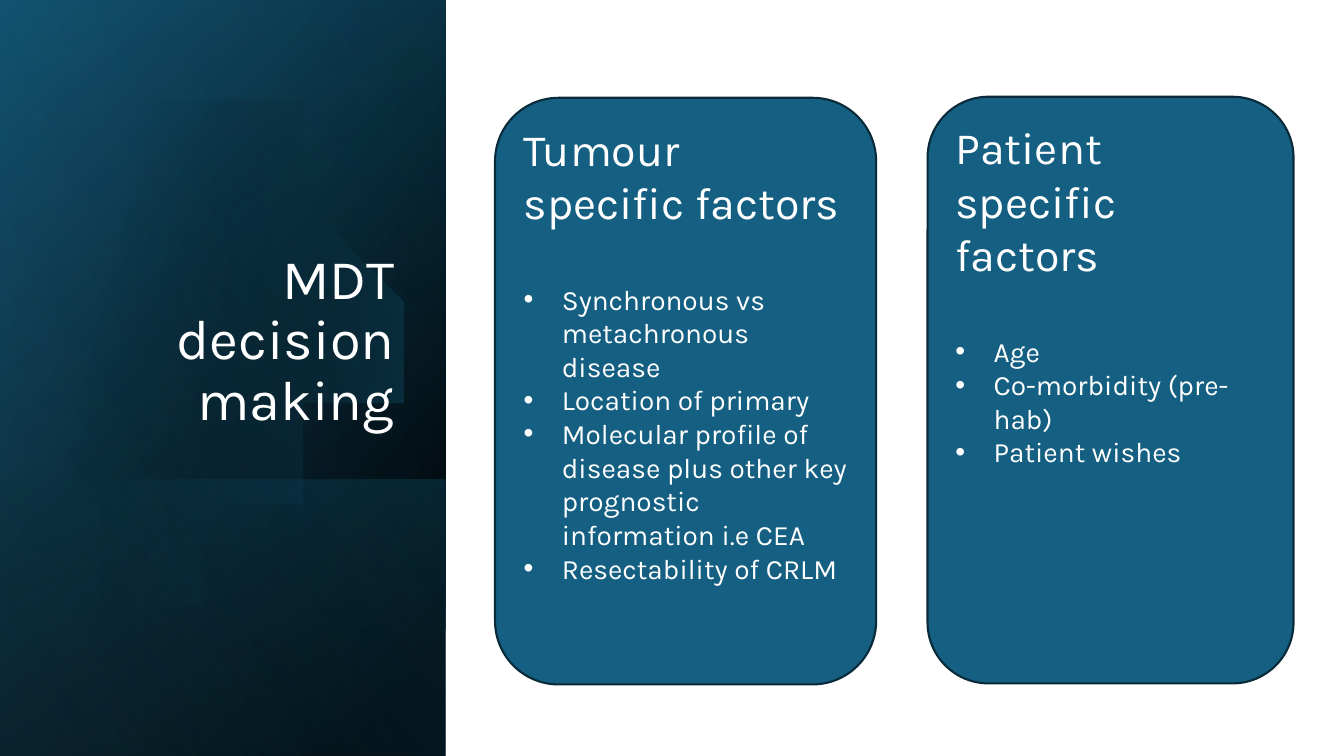
"""Build the slide on MDT decision making with two cards of factors."""
from dataclasses import dataclass

from lxml import etree
from pptx import Presentation
from pptx.dml.color import RGBColor
from pptx.enum.shapes import MSO_SHAPE
from pptx.enum.text import MSO_ANCHOR, PP_ALIGN
from pptx.oxml.ns import qn
from pptx.util import Inches, Pt

RECTANGLE = MSO_SHAPE.RECTANGLE
ROUNDED = MSO_SHAPE.ROUNDED_RECTANGLE
TOP, BOTTOM = MSO_ANCHOR.TOP, MSO_ANCHOR.BOTTOM
LEFT, RIGHT = PP_ALIGN.LEFT, PP_ALIGN.RIGHT

FONT = "Karla"
WHITE, BLACK, BLUE, NAVY = "FFFFFF", "000000", "156082", "092A39"
PANEL_WIDTH, PANEL_HEIGHT = 4.42, 7.5
BULLET_INDENT = 0.38
CURVE_STEPS = 24

Point = tuple[float, float]


@dataclass
class Stop:
    position: int
    color: str
    opacity: int = 100


@dataclass
class Layer:
    top: float
    height: float
    angle: int
    stops: list[Stop]


@dataclass
class Card:
    left: float
    top: float
    width: float
    heading: str
    factors: list[str]


BACK_LAYERS = [
    Layer(0, PANEL_HEIGHT, 50, [Stop(8, BLACK), Stop(100, "104862")]),
    Layer(0, PANEL_HEIGHT, 30, [Stop(0, BLACK, 0), Stop(99, BLUE, 46)]),
    Layer(4.76, 2.74, 130, [Stop(2, BLUE, 29), Stop(100, BLACK, 30)]),
]
FRONT_LAYER = Layer(0, PANEL_HEIGHT, 120, [Stop(0, BLACK, 0), Stop(99, "46B1E1", 11)])

DISC_STOPS = [Stop(29, BLACK, 0), Stop(100, BLUE, 43)]
DISC_ANGLE = 14
DISC_START = (1.49, 1.1)
DISC_RIGHT_CURVES = [
    ((2.46, 1.12), (3.35, 1.77), (3.63, 2.75)),
    ((3.98, 3.97), (3.28, 5.23), (2.07, 5.58)),
    ((1.31, 5.8), (0.53, 5.61), (-0.03, 5.14)),
]
DISC_LEFT_EDGE = [(-0.15, 5.03), (-0.15, 1.75), (0, 1.61)]
DISC_TOP_CURVES = [
    ((0.23, 1.42), (0.5, 1.28), (0.8, 1.19)),
    ((1.03, 1.13), (1.26, 1.1), DISC_START),
]

CARD_HEIGHT = 5.82
CARDS = [
    Card(4.91, 0.97, 3.78, "Tumour specific factors", [
        "Synchronous vs metachronous disease",
        "Location of primary",
        "Molecular profile of disease plus other key prognostic information i.e CEA",
        "Resectability of CRLM",
    ]),
    Card(9.2, 0.96, 3.63, "Patient specific factors", [
        "Age",
        "Co-morbidity (pre-hab)",
        "Patient wishes",
    ]),
]


def rgb(color: str) -> RGBColor:
    return RGBColor.from_string(color)


def fill_gradient(shape, stops: list[Stop], angle: int) -> None:
    shape.shadow.inherit = False
    shape.line.fill.background()
    shape.fill.background()
    gradient = etree.Element(qn("a:gradFill"), rotWithShape="1")
    stop_list = etree.SubElement(gradient, qn("a:gsLst"))
    for stop in stops:
        mark = etree.SubElement(stop_list, qn("a:gs"), pos=str(stop.position * 1000))
        color = etree.SubElement(mark, qn("a:srgbClr"), val=stop.color)
        if stop.opacity < 100:
            etree.SubElement(color, qn("a:alpha"), val=str(stop.opacity * 1000))
    etree.SubElement(gradient, qn("a:lin"), ang=str(angle * 60000), scaled="0")
    properties = shape._element.spPr
    properties.replace(properties.find(qn("a:noFill")), gradient)


def add_layer(page, layer: Layer) -> None:
    left = (PANEL_WIDTH - layer.height) / 2
    top = layer.top + (layer.height - PANEL_WIDTH) / 2
    shape = page.shapes.add_shape(
        RECTANGLE, Inches(left), Inches(top), Inches(layer.height), Inches(PANEL_WIDTH))
    shape.rotation = 90
    shape._element.spPr.find(qn("a:xfrm")).set("flipH", "1")
    fill_gradient(shape, layer.stops, layer.angle)


def trace_curves(start: Point, curves: list[tuple[Point, Point, Point]]) -> list[Point]:
    points = []
    for first, second, end in curves:
        for step in range(1, CURVE_STEPS + 1):
            t = step / CURVE_STEPS
            weights = ((1 - t) ** 3, 3 * t * (1 - t) ** 2, 3 * t ** 2 * (1 - t), t ** 3)
            corners = (start, first, second, end)
            points.append((sum(w * x for w, (x, _) in zip(weights, corners)),
                           sum(w * y for w, (_, y) in zip(weights, corners))))
        start = end
    return points


def add_disc(page) -> None:
    outline = (trace_curves(DISC_START, DISC_RIGHT_CURVES) + DISC_LEFT_EDGE
               + trace_curves(DISC_LEFT_EDGE[-1], DISC_TOP_CURVES))
    builder = page.shapes.build_freeform(*DISC_START, scale=Inches(1))
    builder.add_line_segments(outline, close=True)
    fill_gradient(builder.convert_to_shape(), DISC_STOPS, DISC_ANGLE)


def write(para, text: str, size: int, align=LEFT) -> None:
    para.alignment = align
    span = para.add_run()
    span.text = text
    span.font.name = FONT
    span.font.size = Pt(size)
    span.font.color.rgb = rgb(WHITE)


def add_bullet(para) -> None:
    properties = para._p.get_or_add_pPr()
    properties.set("marL", str(Inches(BULLET_INDENT)))
    properties.set("indent", str(-Inches(BULLET_INDENT)))
    etree.SubElement(properties, qn("a:buFont"), typeface="Arial")
    etree.SubElement(properties, qn("a:buChar"), char="•")


def add_title(page, text: str) -> None:
    box = page.shapes.add_textbox(Inches(0.51), Inches(0.64), Inches(3.5), Inches(3.7))
    frame = box.text_frame
    frame.word_wrap = True
    frame.vertical_anchor = BOTTOM
    para = frame.paragraphs[0]
    para.line_spacing = 0.9
    write(para, text, 40, RIGHT)


def add_card(page, card: Card) -> None:
    box = page.shapes.add_shape(
        ROUNDED, Inches(card.left), Inches(card.top), Inches(card.width), Inches(CARD_HEIGHT))
    box.shadow.inherit = False
    box.fill.solid()
    box.fill.fore_color.rgb = rgb(BLUE)
    box.line.color.rgb = rgb(NAVY)
    box.line.width = Pt(1.5)
    frame = box.text_frame
    frame.word_wrap = True
    frame.vertical_anchor = TOP
    heading = frame.paragraphs[0]
    heading.space_after = Pt(38)
    write(heading, card.heading, 32)
    for factor in card.factors:
        para = frame.add_paragraph()
        write(para, factor, 20)
        add_bullet(para)


def main() -> None:
    deck = Presentation()
    deck.slide_width, deck.slide_height = Inches(13.33), Inches(7.5)
    page = deck.slides.add_slide(deck.slide_layouts[6])
    for layer in BACK_LAYERS:
        add_layer(page, layer)
    add_disc(page)
    add_layer(page, FRONT_LAYER)
    add_title(page, "MDT decision making")
    for card in CARDS:
        add_card(page, card)
    deck.save("out.pptx")


if __name__ == "__main__":
    main()
